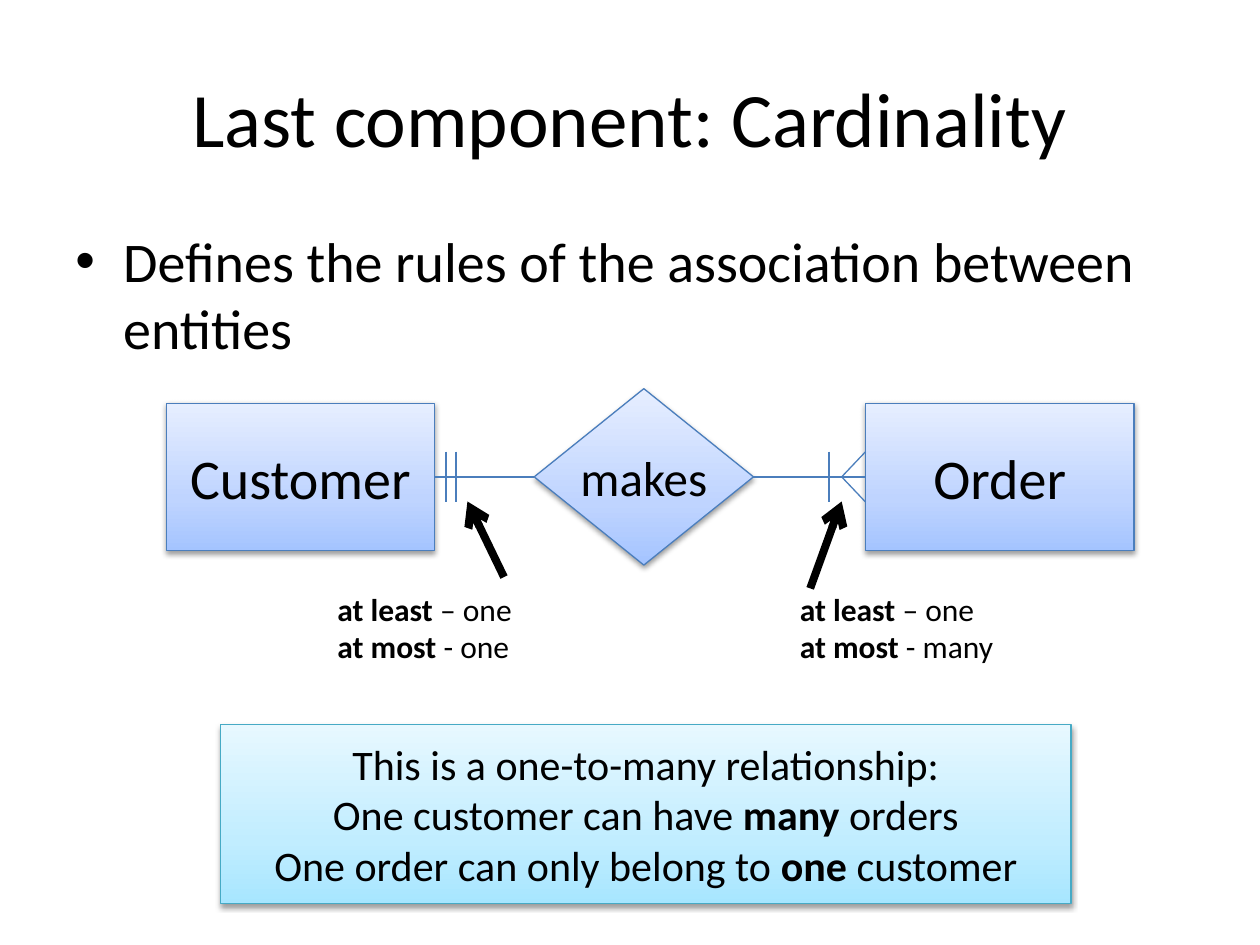
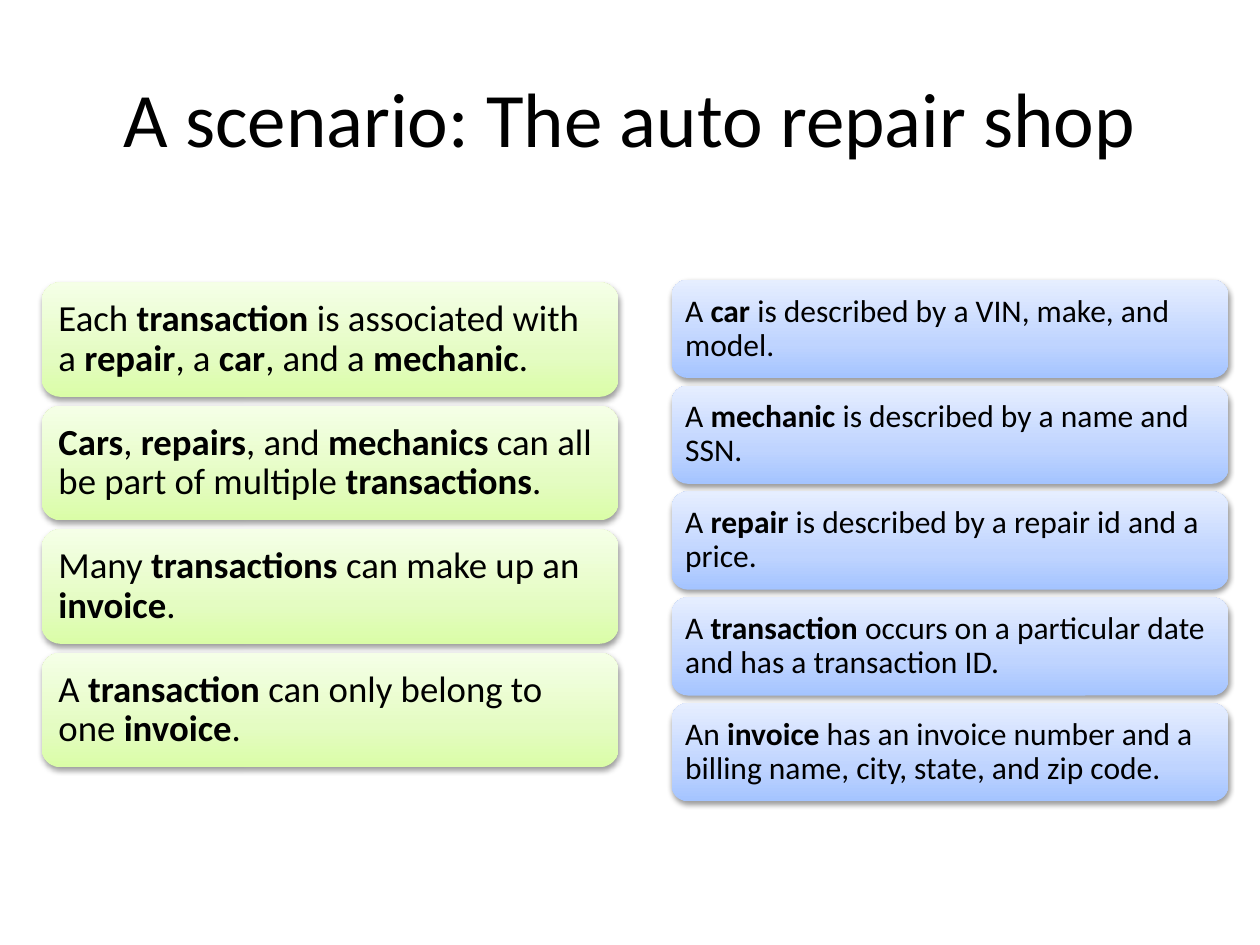
from copy import deepcopy

from pptx import Presentation
from pptx import util as u
from pptx.dml.color import RGBColor
from pptx.enum import shapes, text
from pptx.oxml import parse_xml
from pptx.oxml.ns import nsdecls, qn

# Shared style
FONT = "Calibri"
BLACK = "000000"
LINE_BLUE = "4B7EBC"
LINE_CYAN = "46AAC5"
BLUE = ("A4C4FF", "BFD4FF", "E6EEFF")
CYAN = ("A7E6FF", "C1EDFF", "E7F8FF")
GREEN = ("DAFDA7", "E4FCC2", "F5FFE7")
STOP_POSITIONS = (0, 0.35, 1)
TITLE_BOX = (0.5, 0.3, 9, 1.25)


def rgb(code):
    return RGBColor.from_string(code)


def inches(*lengths):
    return [u.Inches(length) for length in lengths]


def write(frame, lines, size, align=text.PP_ALIGN.LEFT, spacing=None):
    """Fill a frame, one paragraph a line; **double stars** mark bold."""
    for i, line in enumerate(lines):
        paragraph = frame.paragraphs[0] if i == 0 else frame.add_paragraph()
        paragraph.alignment = align
        if spacing:
            paragraph.line_spacing = spacing
        for part, words in enumerate(line.split("**")):
            if words:
                run = paragraph.add_run()
                run.text = words
                run.font.name = FONT
                run.font.size = u.Pt(size)
                run.font.bold = part % 2 == 1
                run.font.color.rgb = rgb(BLACK)


def add_titled_slide(deck, title):
    slide = deck.slides.add_slide(deck.slide_layouts[5])
    heading = slide.shapes.title
    heading.left, heading.top, heading.width, heading.height = inches(*TITLE_BOX)
    heading.text_frame.vertical_anchor = text.MSO_ANCHOR.MIDDLE
    write(heading.text_frame, [title], 44, text.PP_ALIGN.CENTER)
    return slide


def add_panel(slide, kind, box, gradient, outline=None):
    """A shape with an upward gradient and a soft shadow below it."""
    panel = slide.shapes.add_shape(kind, *inches(*box))
    panel.fill.gradient()
    panel.fill.gradient_angle = 90
    stop_list = panel._element.spPr.find(".//" + qn("a:gsLst"))
    stop_list.insert(1, deepcopy(stop_list[0]))
    for stop, colour, position in zip(panel.fill.gradient_stops, gradient, STOP_POSITIONS):
        stop.color.rgb = rgb(colour)
        stop.position = position
    if outline:
        panel.line.color.rgb = rgb(outline)
        panel.line.width = u.Pt(0.75)
    else:
        panel.line.fill.background()
    panel.shadow.inherit = False
    panel._element.spPr.find(qn("a:effectLst")).append(parse_xml(
        f'<a:outerShdw {nsdecls("a")} blurRad="40000" dist="20000" dir="5400000" rotWithShape="0">'
        f'<a:srgbClr val="{BLACK}"><a:alpha val="38000"/></a:srgbClr></a:outerShdw>'))
    panel.text_frame.vertical_anchor = text.MSO_ANCHOR.MIDDLE
    panel.text_frame.word_wrap = True
    return panel


def add_line(slide, start, end, colour=LINE_BLUE, width=0.75, arrow=False):
    line = slide.shapes.add_connector(shapes.MSO_CONNECTOR.STRAIGHT, *inches(*start, *end))
    line.line.color.rgb = rgb(colour)
    line.line.width = u.Pt(width)
    if arrow:
        line.line._get_or_add_ln().append(parse_xml(f'<a:tailEnd {nsdecls("a")} type="arrow"/>'))
    line._element.spPr.append(parse_xml(f'<a:effectLst {nsdecls("a")}/>'))
    return line


def add_definition(slide, box, words):
    frame = slide.shapes.add_textbox(*inches(*box)).text_frame
    frame.word_wrap = True
    properties = frame.paragraphs[0]._p.get_or_add_pPr()
    properties.set("marL", str(u.Inches(0.38)))
    properties.set("indent", str(u.Inches(-0.38)))
    for bullet in ('buFont {} typeface="Arial"', 'buChar {} char="•"'):
        properties.append(parse_xml(f'<a:{bullet.format(nsdecls("a"))}/>'))
    write(frame, [words], 32)


def add_relationship(slide, left, top):
    """Customer - makes - Order, with the cardinality marks on the links."""
    width, height = 2.13, 1.17
    order_left = left + 5.55
    axis = top + height / 2
    center = text.PP_ALIGN.CENTER

    customer = add_panel(slide, shapes.MSO_SHAPE.RECTANGLE, (left, top, width, height), BLUE, LINE_BLUE)
    makes = add_panel(slide, shapes.MSO_SHAPE.DIAMOND, (left + 2.92, axis - 0.7, 1.74, 1.4), BLUE, LINE_BLUE)
    order = add_panel(slide, shapes.MSO_SHAPE.RECTANGLE, (order_left, top, width, height), BLUE, LINE_BLUE)
    makes.text_frame.word_wrap = False
    for entity, label, size in ((customer, "Customer", 32), (makes, "makes", 28), (order, "Order", 32)):
        write(entity.text_frame, [label], size, center)

    # Links between the entities
    for begin, begin_side, end, end_side in ((makes, 1, customer, 3), (order, 1, makes, 3)):
        link = add_line(slide, (0, 0), (1, 1))
        link.begin_connect(begin, begin_side)
        link.end_connect(end, end_side)

    # Bars for "one", crow's foot for "many"
    for bar in (left + width + 0.09, left + width + 0.17, order_left - 0.29):
        add_line(slide, (bar, axis - 0.2), (bar, axis + 0.2))
    for toe in (-0.2, 0.2):
        add_line(slide, (order_left, axis + toe), (order_left - 0.19, axis))


def add_cardinality_note(slide, box, most, arrow_start, arrow_end):
    """A note at its box, with an arrow placed relative to the box corner."""
    left, top = box[:2]
    frame = slide.shapes.add_textbox(*inches(*box)).text_frame
    frame.word_wrap = False
    frame.auto_size = text.MSO_AUTO_SIZE.SHAPE_TO_FIT_TEXT
    write(frame, ["**at least **– one", f"**at most **- {most}"], 18)
    ends = [(left + x, top + y) for x, y in (arrow_start, arrow_end)]
    add_line(slide, *ends, BLACK, 4.5, arrow=True)


def add_summary(slide, box, lines):
    summary = add_panel(slide, shapes.MSO_SHAPE.RECTANGLE, box, CYAN, LINE_CYAN)
    write(summary.text_frame, lines, 24, text.PP_ALIGN.CENTER)


def add_card_column(slide, box, pitch, gradient, size, inset, statements):
    """Equal cards down from the first card's box."""
    left, top, width, height = box
    for row, statement in enumerate(statements):
        card = add_panel(slide, shapes.MSO_SHAPE.ROUNDED_RECTANGLE,
                         (left, top + row * pitch, width, height), gradient)
        frame = card.text_frame
        frame.margin_left, frame.margin_top, frame.margin_right, frame.margin_bottom = inches(*[inset] * 4)
        write(frame, [statement], size, spacing=0.9)


def build_cardinality(deck):
    slide = add_titled_slide(deck, "Last component: Cardinality")
    add_definition(slide, (0.5, 1.75, 9, 4.95), "Defines the rules of the association between entities")
    add_relationship(slide, 1.32, 3.2)
    add_summary(slide, (1.75, 5.75, 6.75, 1.42), [
        "This is a one-to-many relationship:",
        "One customer can have **many** orders",
        "One order can only belong to **one** customer",
    ])
    add_cardinality_note(slide, (2.58, 4.63, 1.77, 0.71), "one", (1.42, -0.05), (1.13, -0.65))
    add_cardinality_note(slide, (6.25, 4.63, 1.94, 0.71), "many", (0.18, 0.04), (0.43, -0.65))


def build_scenario(deck):
    slide = add_titled_slide(deck, "A scenario: The auto repair shop")
    add_card_column(slide, (0.33, 2.24, 4.58, 0.91), 0.98, GREEN, 21, 0.09, [
        "Each **transaction **is associated with a **repair**, a **car**, and a **mechanic**.",
        "**Cars**, **repairs**, and **mechanics** can all be part of multiple **transactions**.",
        "Many **transactions **can make up an **invoice**.",
        "A **transaction **can only belong to one **invoice**.",
    ])
    add_card_column(slide, (5.33, 2.22, 4.42, 0.78), 0.84, BLUE, 18, 0.07, [
        "A **car** is described by a VIN, make, and model.",
        "A **mechanic** is described by a name and SSN.",
        "A **repair **is described by a repair id and a price.",
        "A **transaction** occurs on a particular date and has a transaction ID.",
        "An **invoice** has an invoice number and a billing name, city, state, and zip code.",
    ])


def main():
    deck = Presentation()
    deck.slide_width, deck.slide_height = inches(10, 7.5)
    build_cardinality(deck)
    build_scenario(deck)
    deck.save("out.pptx")


if __name__ == "__main__":
    main()
